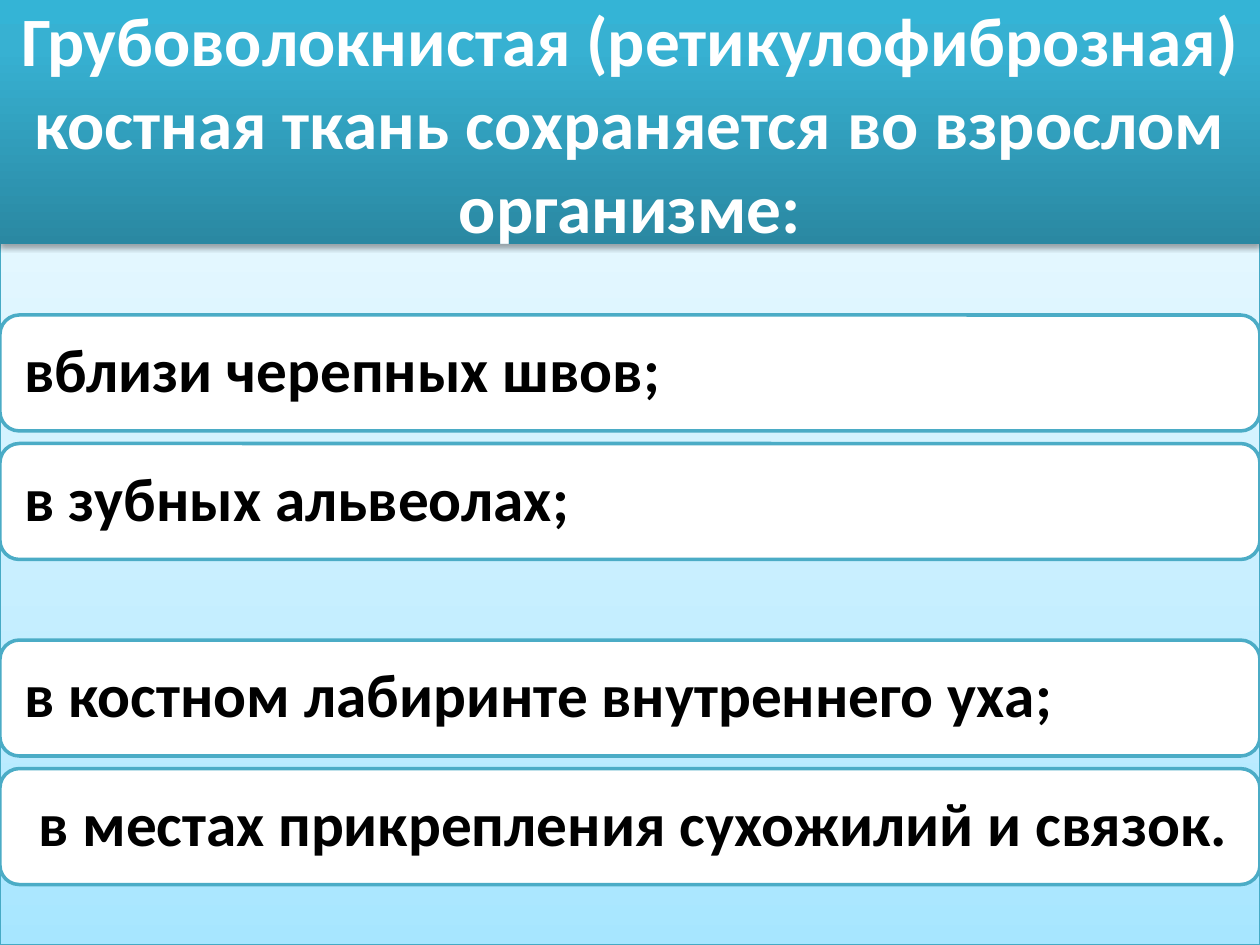
import pptx
import pptx.dml.color
import pptx.enum.shapes
import pptx.enum.text
import pptx.oxml
import pptx.oxml.ns
import pptx.util
from dataclasses import dataclass

SHAPES = pptx.enum.shapes.MSO_SHAPE
ALIGN = pptx.enum.text.PP_ALIGN
RGB = pptx.dml.color.RGBColor.from_string
Inches = pptx.util.Inches
Pt = pptx.util.Pt


@dataclass(frozen=True)
class Theme:
    font: str = "Calibri"
    title_size: float = 39.6
    item_size: float = 35
    title_color: str = "FFFFFF"
    item_color: str = "000000"
    item_fill: str = "FFFFFF"
    item_line: str = "4BACC6"
    panel_line: str = "46AAC5"
    # Gradient stops run from the bottom edge to the top edge
    panel_stops: tuple = ((0, "A7E6FF"), (35, "C1EDFF"), (100, "E7F8FF"))
    title_stops: tuple = ((0, "2A88A2"), (80, "37B1D2"), (100, "34B4D6"))


THEME = Theme()
WIDTH, HEIGHT = 10, 7.5
TITLE_HEIGHT = 1.94
PANEL_TOP = 1.55

# Items stand in two groups of two rows
GROUPS = (
    ("вблизи черепных швов;", "в зубных альвеолах;"),
    ("в костном лабиринте внутреннего уха;",
     " в местах прикрепления сухожилий и связок."),
)
FIRST_ROW, ROW_HEIGHT = 2.5, 0.92
ROW_PITCH, GROUP_PITCH = 1.02, 2.58


def place(shape, left, top, width, height):
    shape.left, shape.top = Inches(left), Inches(top)
    shape.width, shape.height = Inches(width), Inches(height)


def set_gradient(shape, stops):
    shape.fill.gradient()
    shape.fill.gradient_angle = 90
    stop_list = shape.element.spPr.find(".//" + pptx.oxml.ns.qn("a:gsLst"))
    for stop in list(stop_list):
        stop_list.remove(stop)
    for position, color in stops:
        stop_list.append(pptx.oxml.parse_xml(
            f'<a:gs {pptx.oxml.ns.nsdecls("a")} pos="{position * 1000}">'
            f'<a:srgbClr val="{color}"/></a:gs>'))


def set_shadow(shape, opacity, blur, distance):
    """Drop a black shadow straight down; lengths in points."""
    shape.shadow.inherit = False
    effects = shape.element.spPr.find(pptx.oxml.ns.qn("a:effectLst"))
    effects.append(pptx.oxml.parse_xml(
        f'<a:outerShdw {pptx.oxml.ns.nsdecls("a")} blurRad="{Pt(blur)}" '
        f'dist="{Pt(distance)}" dir="5400000" rotWithShape="0">'
        f'<a:srgbClr val="000000"><a:alpha val="{opacity * 1000}"/></a:srgbClr>'
        f'</a:outerShdw>'))


def write_text(shape, text, *, size, color, align, spacing=1.0, inset=None):
    frame = shape.text_frame
    frame.text = text
    frame.word_wrap = True
    frame.auto_size = pptx.enum.text.MSO_AUTO_SIZE.NONE
    frame.vertical_anchor = pptx.enum.text.MSO_ANCHOR.MIDDLE
    if inset is not None:
        frame.margin_left = frame.margin_right = Inches(inset)
        frame.margin_top = frame.margin_bottom = Inches(inset)
    paragraph = frame.paragraphs[0]
    paragraph.alignment = align
    paragraph.line_spacing = spacing
    font = paragraph.runs[0].font
    font.name, font.size, font.bold = THEME.font, Pt(size), True
    font.color.rgb = RGB(color)


def add_box(slide, kind, top, height, line_color, line_width):
    """Add a full-width outlined box."""
    box = slide.shapes.add_shape(
        kind, 0, Inches(top), Inches(WIDTH), Inches(height))
    box.shadow.inherit = False
    box.line.color.rgb = RGB(line_color)
    box.line.width = Pt(line_width)
    return box


def add_panel(slide):
    panel = add_box(slide, SHAPES.RECTANGLE, PANEL_TOP, HEIGHT - PANEL_TOP,
                    THEME.panel_line, 0.75)
    set_gradient(panel, THEME.panel_stops)
    set_shadow(panel, 38, 3.1, 1.6)


def format_title(slide, text):
    title = slide.shapes.title
    place(title, 0, 0, WIDTH, TITLE_HEIGHT)
    set_gradient(title, THEME.title_stops)
    set_shadow(title, 35, 3.1, 1.8)
    write_text(title, text, size=THEME.title_size, color=THEME.title_color,
               align=ALIGN.CENTER)
    # Bring the title in front of the panel
    title.element.getparent().append(title.element)


def add_item(slide, text, top):
    item = add_box(slide, SHAPES.ROUNDED_RECTANGLE, top, ROW_HEIGHT,
                   THEME.item_line, 2)
    item.fill.solid()
    item.fill.fore_color.rgb = RGB(THEME.item_fill)
    write_text(item, text, size=THEME.item_size, color=THEME.item_color,
               align=ALIGN.LEFT, spacing=0.9, inset=0.15)


def main():
    presentation = pptx.Presentation()
    presentation.slide_width = Inches(WIDTH)
    presentation.slide_height = Inches(HEIGHT)
    slide = presentation.slides.add_slide(presentation.slide_layouts[5])

    # Background panel and heading
    add_panel(slide)
    format_title(slide, "Грубоволокнистая (ретикулофиброзная) костная ткань "
                        "сохраняется во взрослом организме:")

    # List of places
    for group, items in enumerate(GROUPS):
        for row, text in enumerate(items):
            add_item(slide, text,
                     FIRST_ROW + group * GROUP_PITCH + row * ROW_PITCH)

    presentation.save("out.pptx")


if __name__ == "__main__":
    main()
